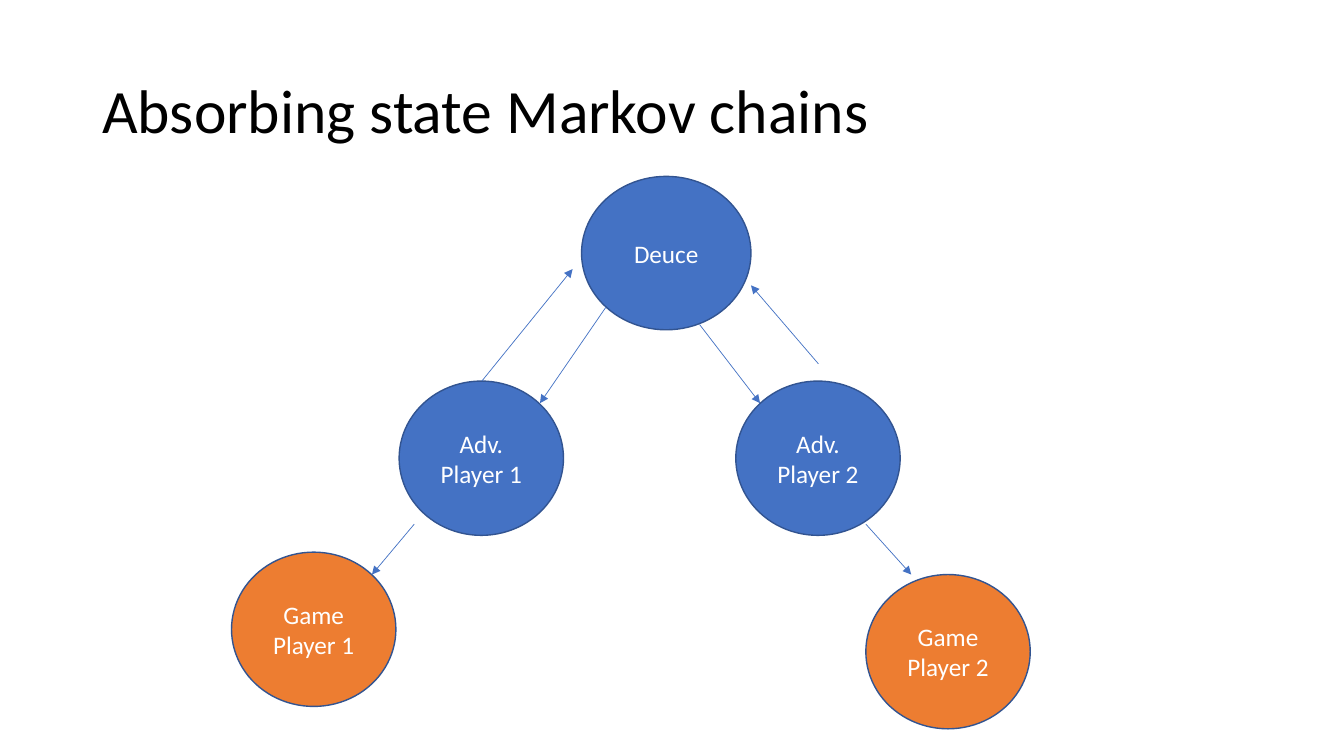
from dataclasses import dataclass

from lxml.etree import SubElement
from pptx import Presentation
from pptx.dml.color import RGBColor as Rgb
from pptx.enum.shapes import MSO_CONNECTOR as Conn, MSO_SHAPE as Geo
from pptx.enum.text import MSO_ANCHOR as Anchor, PP_ALIGN as Align
from pptx.oxml.ns import qn
from pptx.slide import Slide
from pptx.text.text import TextFrame
from pptx.util import Pt

FONT = "Calibri"
COLORS = {
    "text": "000000",
    "label": "FFFFFF",
    "play": "4472C4",
    "end": "ED7D31",
    "edge": "325491",
}


@dataclass
class State:
    label: str
    left: float
    top: float
    fill: str = "play"
    width: float = 117.4
    height: float = 110.2


@dataclass
class Move:
    start: tuple[float, float]
    end: tuple[float, float]


STATES = [
    State("Deuce", 415.4, 126, width=121, height=109.6),
    State("Adv.\nPlayer 1", 285.1, 272.2),
    State("Adv.\nPlayer 2", 525.6, 272.2),
    State("Game\nPlayer 1", 165.4, 394.4, "end"),
    State("Game\nPlayer 2", 618.5, 410.4, "end"),
]
MOVES = [
    Move((432.7, 219.6), (385.7, 288)),
    Move((344.2, 272.2), (409, 192.2)),
    Move((499.7, 231.8), (542.9, 288)),
    Move((584.6, 259.9), (536.4, 203.8)),
    Move((295.9, 374.4), (265.7, 410.4)),
    Move((618.5, 374.4), (650.9, 410.4)),
]


def color(name: str) -> Rgb:
    return Rgb.from_string(COLORS[name])


def write(frame: TextFrame, text: str, size: float, ink: str, align: Align) -> None:
    frame.text = text
    frame.word_wrap = True
    frame.vertical_anchor = Anchor.MIDDLE
    for para in frame.paragraphs:
        para.alignment = align
        para.font.name = FONT
        para.font.size = Pt(size)
        para.font.color.rgb = color(ink)


def add_title(slide: Slide, text: str) -> None:
    box = slide.shapes.add_textbox(Pt(66), Pt(28.8), Pt(828), Pt(104.4))
    write(box.text_frame, text, 44, "text", Align.LEFT)
    box.text_frame.paragraphs[0].line_spacing = 0.9


def add_state(slide: Slide, state: State) -> None:
    oval = slide.shapes.add_shape(
        Geo.OVAL, Pt(state.left), Pt(state.top), Pt(state.width), Pt(state.height)
    )
    oval.shadow.inherit = False
    oval.fill.solid()
    oval.fill.fore_color.rgb = color(state.fill)
    oval.line.color.rgb = color("edge")
    oval.line.width = Pt(1)
    write(oval.text_frame, state.label, 18, "label", Align.CENTER)


def add_move(slide: Slide, move: Move) -> None:
    ends = [Pt(value) for value in (*move.start, *move.end)]
    arrow = slide.shapes.add_connector(Conn.STRAIGHT, *ends)
    arrow.line.color.rgb = color("play")
    arrow.line.width = Pt(0.5)
    SubElement(arrow.line._get_or_add_ln(), qn("a:tailEnd"), type="triangle")
    SubElement(arrow._element.spPr, qn("a:effectLst"))


def main() -> None:
    deck = Presentation()
    deck.slide_width, deck.slide_height = Pt(960), Pt(540)
    slide = deck.slides.add_slide(deck.slide_layouts[6])

    # Heading
    add_title(slide, "Absorbing state Markov chains")

    # States of the chain
    for state in STATES:
        add_state(slide, state)

    # Moves between states
    for move in MOVES:
        add_move(slide, move)

    deck.save("out.pptx")


if __name__ == "__main__":
    main()
